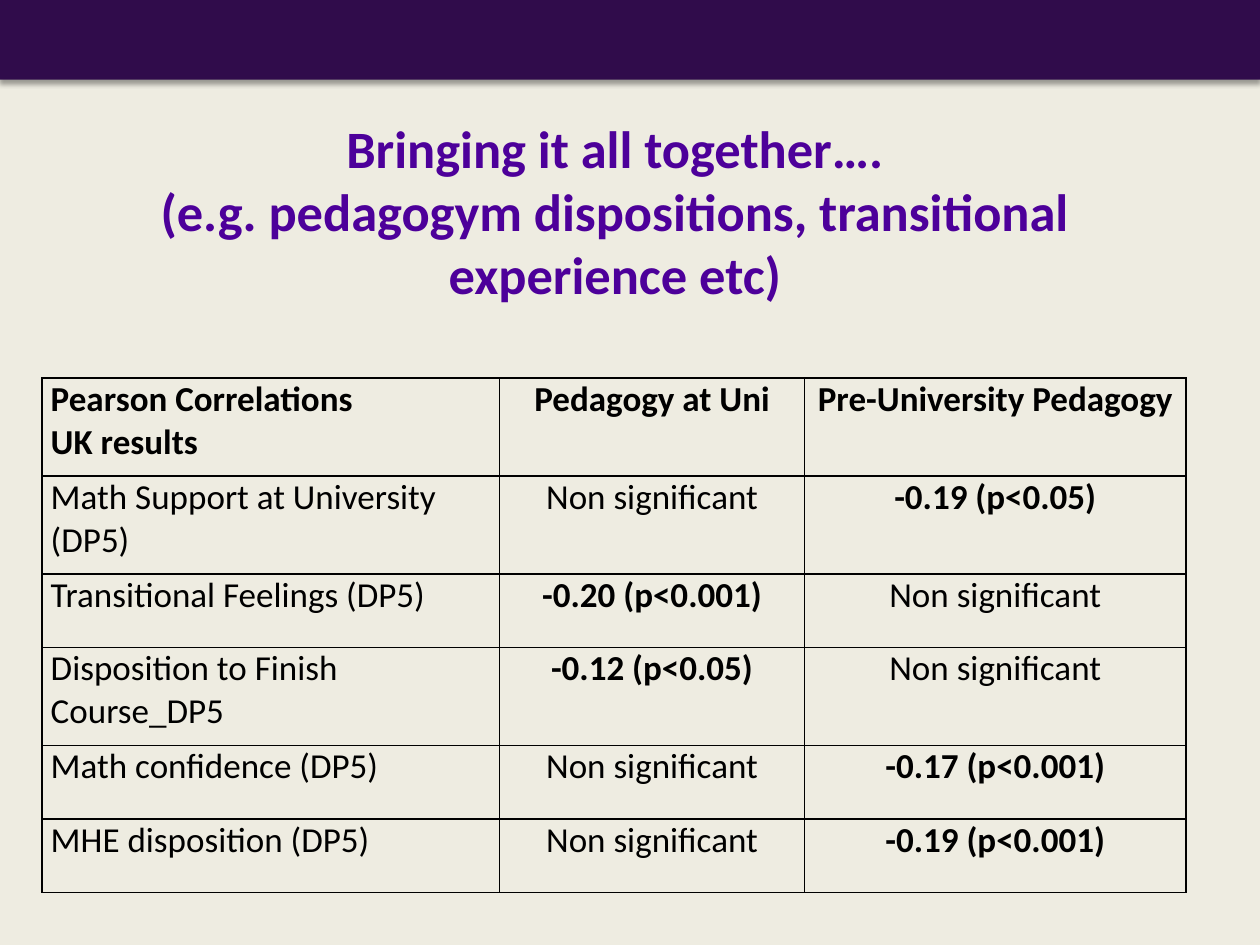
"""Build a slide with a title and a table of correlations."""
from lxml import etree
from pptx import Presentation
from pptx.dml.color import RGBColor
from pptx.enum import shapes, text
from pptx.oxml import parse_xml
from pptx.oxml.ns import nsdecls
from pptx.util import Pt


def color(value):
    return RGBColor.from_string(value)


def write(frame, content, size=20, bold=False, fill="000000", align=text.PP_ALIGN.LEFT):
    frame.word_wrap = True
    for index, line in enumerate(content.split("\n")):
        paragraph = frame.paragraphs[0] if index == 0 else frame.add_paragraph()
        paragraph.alignment = align
        run = paragraph.add_run()
        run.text = line
        run.font.name = "Calibri"
        run.font.size = Pt(size)
        run.font.bold = bold
        run.font.color.rgb = color(fill)


presentation = Presentation()
presentation.slide_width, presentation.slide_height = Pt(720), Pt(540)
slide = presentation.slides.add_slide(presentation.slide_layouts[6])
slide.background.fill.solid()
slide.background.fill.fore_color.rgb = color("EEECE1")

banner = slide.shapes.add_shape(shapes.MSO_SHAPE.RECTANGLE, 0, 0, Pt(720), Pt(45.5))
banner.fill.solid()
banner.fill.fore_color.rgb = color("300C4B")
banner.line.fill.background()
banner.shadow.inherit = False
effects = banner._element.spPr.find("a:effectLst", {"a": "http://schemas.openxmlformats.org/drawingml/2006/main"})
effects.append(parse_xml(
    f'<a:outerShdw {nsdecls("a")} blurRad="{Pt(3.1)}" dist="{Pt(1.8)}" dir="5400000" rotWithShape="0">'
    '<a:srgbClr val="000000"><a:alpha val="35000"/></a:srgbClr></a:outerShdw>'))

rows = [
    ("Pearson Correlations\nUK results", "Pedagogy at Uni", "Pre-University Pedagogy"),
    ("Math Support at University (DP5)", "Non significant", "-0.19 (p<0.05)"),
    ("Transitional Feelings (DP5)", "-0.20 (p<0.001)", "Non significant"),
    ("Disposition to Finish Course_DP5", "-0.12 (p<0.05)", "Non significant"),
    ("Math confidence (DP5)", "Non significant", "-0.17 (p<0.001)"),
    ("MHE disposition (DP5)", "Non significant", "-0.19 (p<0.001)"),
]
widths = [261.5, 174.3, 218]
heights = [56, 56, 42, 56, 42, 42]
table = slide.shapes.add_table(
    len(rows), len(widths), Pt(24), Pt(216), Pt(sum(widths)), Pt(sum(heights))).table
table.first_row = table.horz_banding = False
for column, width in zip(table.columns, widths):
    column.width = Pt(width)

for row_index, (values, height) in enumerate(zip(rows, heights)):
    table.rows[row_index].height = Pt(height)
    for column_index, value in enumerate(values):
        cell = table.cell(row_index, column_index)
        cell.margin_left = cell.margin_right = Pt(5)
        cell.margin_top = cell.margin_bottom = 0
        properties = cell._tc.get_or_add_tcPr()
        for side in ("lnL", "lnR", "lnT", "lnB"):
            properties.append(parse_xml(
                f'<a:{side} {nsdecls("a")} w="{Pt(1)}"><a:solidFill>'
                f'<a:srgbClr val="000000"/></a:solidFill></a:{side}>'))
        cell.fill.background()
        write(cell.text_frame, value, bold=row_index == 0 or value.startswith("-"),
              align=text.PP_ALIGN.CENTER if column_index else text.PP_ALIGN.LEFT)

title = slide.shapes.add_textbox(Pt(25), Pt(62.6), Pt(653), Pt(116.6))
write(title.text_frame,
      "Bringing it all together….\n(e.g. pedagogym dispositions, transitional experience etc)",
      size=30, bold=True, fill="4D009A", align=text.PP_ALIGN.CENTER)
title.text_frame.auto_size = text.MSO_AUTO_SIZE.SHAPE_TO_FIT_TEXT

presentation.save("out.pptx")
